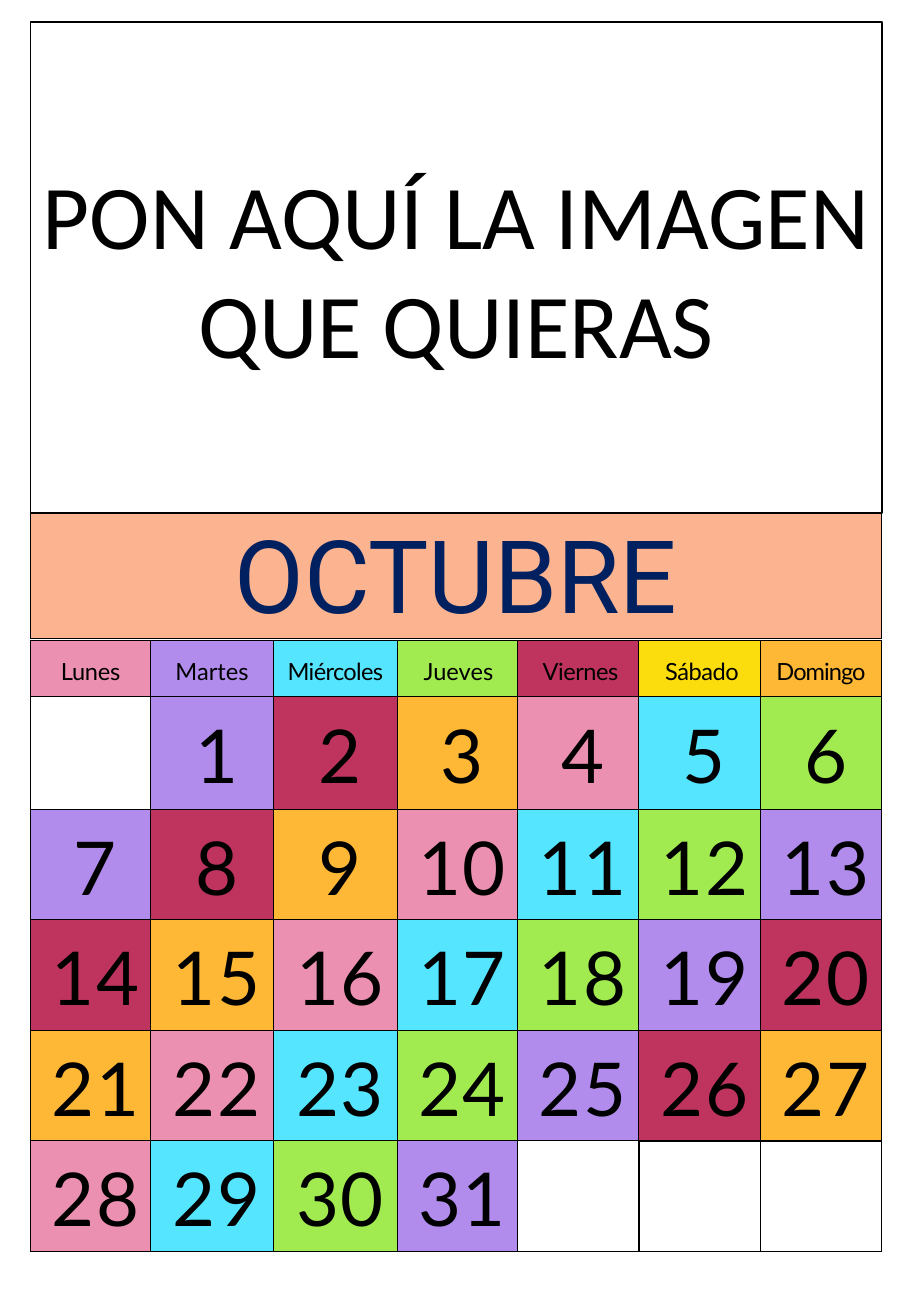
"""Build the October page of a wall calendar with space for a picture."""
from lxml.etree import SubElement
from pptx import Presentation
from pptx.dml.color import RGBColor
from pptx.enum.shapes import MSO_SHAPE
from pptx.enum.text import MSO_ANCHOR, PP_ALIGN
from pptx.oxml.ns import qn
from pptx.util import Cm, Pt

COLORS = {
    "white": "FFFFFF", "black": "000000", "navy": "002060", "peach": "FBB390",
    "pink": "EB90B0", "purple": "B18CEC", "cyan": "55E5FF", "green": "A1EB51",
    "crimson": "BE345E", "yellow": "FBDD0D", "orange": "FFB836",
}
LEFT, WIDTH = Cm(0.64), Cm(17.8)


def write(text_frame, text, size, font="Lato", color="black", spacing=0, before=0, indent=0):
    paragraph = text_frame.paragraphs[0]
    paragraph.alignment = PP_ALIGN.CENTER
    paragraph.space_before = Pt(before)
    paragraph._p.get_or_add_pPr().set("marL", str(Cm(indent)))
    run = paragraph.add_run()
    run.text = text
    run.font.size = Pt(size)
    run.font.name = font
    run.font.color.rgb = RGBColor.from_string(COLORS[color])
    run._r.get_or_add_rPr().set("spc", str(round(spacing * 100)))


def style_cell(cell, color, weight=0.75, top=0.08):
    cell.vertical_anchor = MSO_ANCHOR.MIDDLE
    cell.margin_left = cell.margin_right = cell.margin_bottom = 0
    cell.margin_top = Cm(top)
    properties = cell._tc.get_or_add_tcPr()
    for side in ("a:lnL", "a:lnR", "a:lnT", "a:lnB"):
        border = SubElement(properties, qn(side), w=str(Pt(weight)))
        fill = SubElement(border, qn("a:solidFill"))
        SubElement(fill, qn("a:srgbClr"), val=COLORS["black"])
    cell.fill.solid()
    cell.fill.fore_color.rgb = RGBColor.from_string(COLORS[color])


prs = Presentation()
prs.slide_width, prs.slide_height = Cm(19.05), Cm(27.51)
slide = prs.slides.add_slide(prs.slide_layouts[6])

month = slide.shapes.add_table(1, 1, LEFT, Cm(10.72), WIDTH, Cm(2.62)).table
month.first_row = month.horz_banding = False
style_cell(month.cell(0, 0), "peach", top=0.13)
write(month.cell(0, 0).text_frame, "OCTUBRE", 60, font="Roboto", color="navy", before=4.2)

column_widths = [2.51, 2.57, 2.59, 2.51, 2.54, 2.54, 2.54]
row_heights = [1.17, 2.36] + [2.31] * 4
days = slide.shapes.add_table(6, 7, LEFT, Cm(13.39), WIDTH, Cm(sum(row_heights))).table
days.first_row = days.horz_banding = False
for column, width in zip(days.columns, column_widths):
    column.width = Cm(width)
for row, height in zip(days.rows, row_heights):
    row.height = Cm(height)

weekdays = [
    ("Lunes", "pink", -0.2, 0), ("Martes", "purple", 0, 0),
    ("Miércoles", "cyan", -0.4, 0), ("Jueves", "green", 0, 0.05),
    ("Viernes", "crimson", -0.3, 0.1), ("Sábado", "yellow", -0.3, 0.1),
    ("Domingo", "orange", -0.6, 0),
]
for index, (weekday, color, spacing, indent) in enumerate(weekdays):
    cell = days.cell(0, index)
    style_cell(cell, color, top=0.13)
    write(cell.text_frame, weekday, 14, spacing=spacing, before=4.2, indent=indent)

date_colors = ["purple", "crimson", "orange", "pink", "cyan", "green"]
for date in range(35):
    week, weekday = divmod(date, 7)
    cell = days.cell(week + 1, weekday)
    if 1 <= date <= 31:
        style_cell(cell, date_colors[(date - 1) % 6])
        write(cell.text_frame, str(date), 44, spacing=1, before=4.8, indent=0.2)
    else:
        style_cell(cell, "white", weight=0.75 if date == 32 else 1)

picture_space = slide.shapes.add_shape(MSO_SHAPE.RECTANGLE, LEFT, Cm(0.46), WIDTH, Cm(10.26))
picture_space.shadow.inherit = False
picture_space.fill.solid()
picture_space.fill.fore_color.rgb = RGBColor.from_string(COLORS["white"])
picture_space.line.color.rgb = RGBColor.from_string(COLORS["black"])
picture_space.line.width = Pt(1)
picture_space.text_frame.word_wrap = True
picture_space.text_frame.vertical_anchor = MSO_ANCHOR.MIDDLE
write(picture_space.text_frame, "PON AQUÍ LA IMAGEN QUE QUIERAS", 54, font="Calibri")

prs.save("out.pptx")
